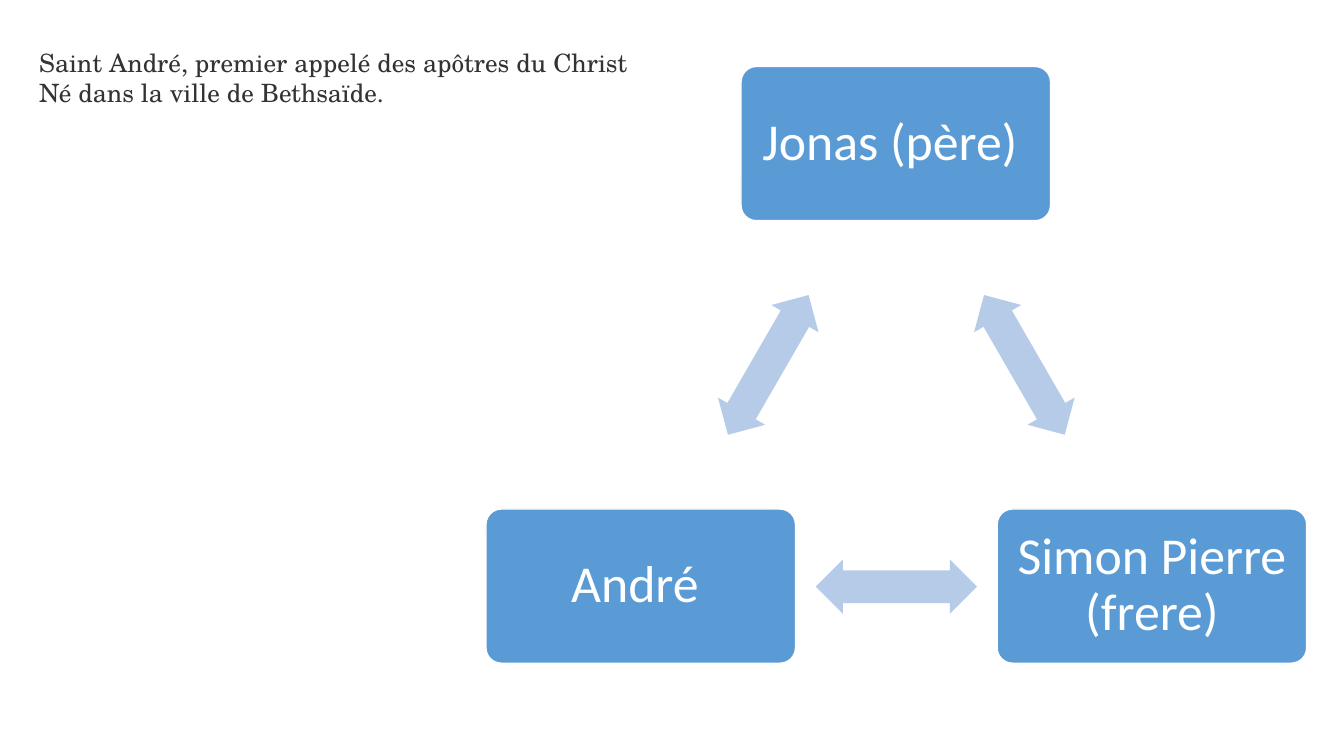
from pptx import Presentation
from pptx.dml.color import RGBColor
from pptx.enum.shapes import MSO_SHAPE as SHAPE
from pptx.enum.text import MSO_ANCHOR as ANCHOR, MSO_AUTO_SIZE as AUTO_SIZE, PP_ALIGN as ALIGN
from pptx.util import Inches, Pt

WHITE = RGBColor(0xFF, 0xFF, 0xFF)
BLUE = RGBColor(0x5B, 0x9B, 0xD5)
PALE_BLUE = RGBColor(0xB5, 0xCB, 0xE7)
DARK_GREY = RGBColor(0x33, 0x33, 0x33)

prs = Presentation()
prs.slide_width = Inches(13.33)
prs.slide_height = Inches(7.5)
slide = prs.slides.add_slide(prs.slide_layouts[6])


def add_run(paragraph, text, font_name, size, color):
    run = paragraph.add_run()
    run.text = text
    run.font.name = font_name
    run.font.size = Pt(size)
    run.font.color.rgb = color


intro = slide.shapes.add_textbox(Inches(0.29), Inches(0.42), Inches(7.3), Inches(0.71)).text_frame
intro.word_wrap = True
intro.auto_size = AUTO_SIZE.SHAPE_TO_FIT_TEXT
intro_lines = ["Saint André, premier appelé des apôtres du Christ", "Né dans la ville de Bethsaïde."]
for index, line in enumerate(intro_lines):
    paragraph = intro.add_paragraph() if index else intro.paragraphs[0]
    add_run(paragraph, line, "TeX Gyre Schola", 18, DARK_GREY)

family = [
    ("Jonas (père) ", 7.35, 0.66),
    ("Simon Pierre (frere)", 9.89, 5.05),
    ("André ", 4.82, 5.05),
]
for name, left, top in family:
    member = slide.shapes.add_shape(
        SHAPE.ROUNDED_RECTANGLE, Inches(left), Inches(top), Inches(3.07), Inches(1.53))
    member.adjustments[0] = 0.1
    member.shadow.inherit = False
    member.fill.solid()
    member.fill.fore_color.rgb = BLUE
    member.line.color.rgb = WHITE
    member.line.width = Pt(1)
    label = member.text_frame
    label.word_wrap = True
    label.vertical_anchor = ANCHOR.MIDDLE
    label.margin_left = label.margin_right = Inches(0.15)
    label.margin_top = label.margin_bottom = Inches(0.15)
    paragraph = label.paragraphs[0]
    paragraph.alignment = ALIGN.CENTER
    paragraph.line_spacing = 0.9
    add_run(paragraph, name, "Calibri", 37, WHITE)

for left, top, angle in [(9.36, 3.35, 60), (8.09, 5.55, 180), (6.82, 3.35, 300)]:
    bond = slide.shapes.add_shape(
        SHAPE.LEFT_RIGHT_ARROW, Inches(left), Inches(top), Inches(1.6), Inches(0.54))
    bond.adjustments[0] = 0.6
    bond.adjustments[1] = 0.5
    bond.rotation = angle
    bond.shadow.inherit = False
    bond.fill.solid()
    bond.fill.fore_color.rgb = PALE_BLUE
    bond.line.fill.background()

prs.save("out.pptx")
